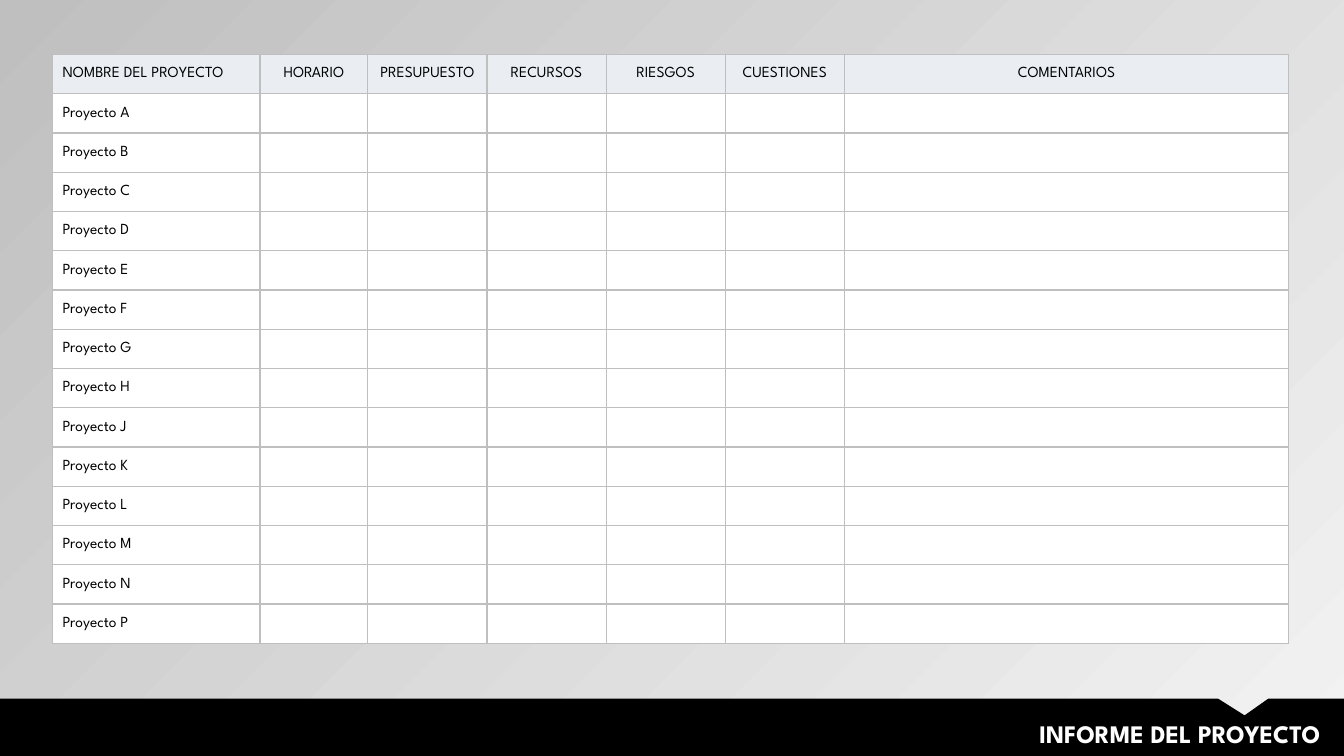
from lxml import etree
from pptx import Presentation
from pptx.dml.color import RGBColor
from pptx.enum import text
from pptx.oxml import ns
from pptx.util import Pt

FONT = "League Spartan"
HEADERS = ["NOMBRE DEL PROYECTO", "HORARIO", "PRESUPUESTO", "RECURSOS",
           "RIESGOS", "CUESTIONES", "COMENTARIOS"]
PROJECTS = "ABCDEFGHJKLMNP"
COL_WIDTHS = [148.3, 77, 85.1, 85.1, 85.1, 85.1, 317.5]
ROW_HEIGHT = 28.04
BAR = [(0, 499), (870.5, 499), (889.2, 511.2), (906.5, 499),
       (960, 499), (960, 540), (0, 540)]


def rgb(value):
    return RGBColor.from_string(value)


def paint(fill, color):
    fill.solid()
    fill.fore_color.rgb = rgb(color)


def style(p, size, color, align, bold=False):
    p.alignment = align
    p.font.name = FONT
    p.font.size = Pt(size)
    p.font.bold = bold
    p.font.color.rgb = rgb(color)


def add_background(s):
    fill = s.background.fill
    fill.gradient()
    fill.gradient_angle = 135
    for stop, color in zip(fill.gradient_stops, ("F2F2F2", "BFBFBF")):
        stop.color.rgb = rgb(color)


def add_borders(cell, color, width):
    tc_pr = cell._tc.get_or_add_tcPr()
    for side in ("lnL", "lnR", "lnT", "lnB"):
        ln = etree.SubElement(tc_pr, ns.qn(f"a:{side}"), w=str(Pt(width)))
        solid = etree.SubElement(ln, ns.qn("a:solidFill"))
        etree.SubElement(solid, ns.qn("a:srgbClr"), val=color)


def fill_cell(cell, value, color, align):
    cell.margin_left = cell.margin_right = Pt(7.2)
    cell.margin_top = cell.margin_bottom = 0
    cell.vertical_anchor = text.MSO_ANCHOR.MIDDLE
    add_borders(cell, "BFBFBF", 1)
    paint(cell.fill, color)
    cell.text = value
    style(cell.text_frame.paragraphs[0], 11, "000000", align)


def add_report_table(s, left, top):
    rows = [HEADERS]
    rows += [[f"Proyecto {letter}"] + [""] * (len(HEADERS) - 1) for letter in PROJECTS]
    table = s.shapes.add_table(len(rows), len(HEADERS), Pt(left), Pt(top),
                               Pt(sum(COL_WIDTHS)), Pt(ROW_HEIGHT * len(rows))).table
    for col, width in zip(table.columns, COL_WIDTHS):
        col.width = Pt(width)
    for i, values in enumerate(rows):
        table.rows[i].height = Pt(ROW_HEIGHT)
        for j, value in enumerate(values):
            align = text.PP_ALIGN.CENTER if j else text.PP_ALIGN.LEFT
            fill_cell(table.cell(i, j), value, "FFFFFF" if i else "EAEEF3", align)


def add_outline(s, points, color):
    builder = s.shapes.build_freeform(*points[0], scale=Pt(1))
    builder.add_line_segments(points[1:], close=True)
    sp = builder.convert_to_shape()
    sp.shadow.inherit = False
    paint(sp.fill, color)
    sp.line.fill.background()


def add_title(s, value, left, top, width, height):
    tf = s.shapes.add_textbox(Pt(left), Pt(top), Pt(width), Pt(height)).text_frame
    tf.word_wrap = True
    tf.auto_size = text.MSO_AUTO_SIZE.SHAPE_TO_FIT_TEXT
    tf.text = value
    style(tf.paragraphs[0], 18, "FFFFFF", text.PP_ALIGN.RIGHT, bold=True)


def main():
    prs = Presentation()
    prs.slide_width, prs.slide_height = Pt(960), Pt(540)
    s = prs.slides.add_slide(prs.slide_layouts[6])
    add_background(s)
    add_report_table(s, 37.5, 38.9)
    add_outline(s, BAR, "000000")
    add_title(s, "INFORME DEL PROYECTO", 298, 509.8, 652.3, 28.8)
    prs.save("out.pptx")


if __name__ == "__main__":
    main()
